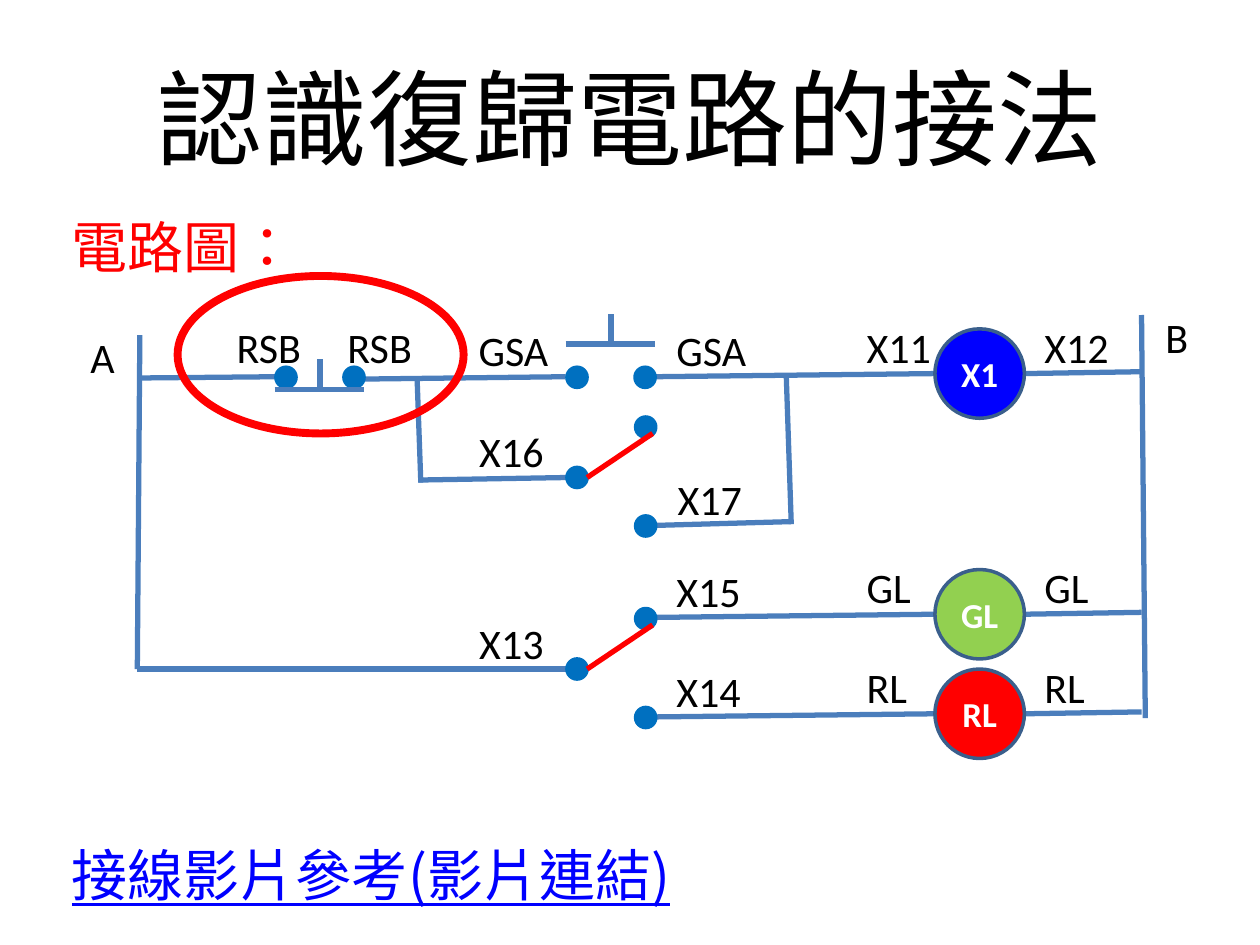
from lxml import etree
from pptx import Presentation
from pptx.dml.color import RGBColor
from pptx.enum.shapes import MSO_CONNECTOR, MSO_SHAPE
from pptx.enum.text import MSO_ANCHOR, MSO_AUTO_SIZE, PP_ALIGN
from pptx.oxml.ns import qn
from pptx.util import Inches, Pt

STRAIGHT = MSO_CONNECTOR.STRAIGHT
OVAL = MSO_SHAPE.OVAL
MIDDLE = MSO_ANCHOR.MIDDLE
NO_FIT, GROW = MSO_AUTO_SIZE.NONE, MSO_AUTO_SIZE.SHAPE_TO_FIT_TEXT
CENTER, LEFT = PP_ALIGN.CENTER, PP_ALIGN.LEFT

BLACK = RGBColor(0x00, 0x00, 0x00)
WHITE = RGBColor(0xFF, 0xFF, 0xFF)
RED = RGBColor(0xFF, 0x00, 0x00)
BLUE = RGBColor(0x00, 0x00, 0xFF)
GREEN = RGBColor(0x92, 0xD0, 0x50)
WIRE = RGBColor(0x4B, 0x7E, 0xBC)
EDGE = RGBColor(0x3A, 0x5F, 0x8C)
DOT = RGBColor(0x00, 0x70, 0xC0)

LATIN, CJK = "Calibri", "Noto Sans CJK JP"
COLS, ROWS = 100, 75
CELL = Inches(0.1)
LAMP_X, LAMP_SIZE, DOT_SIZE = 74.2, 7.1, 1.6
LABEL_WIDTHS = {1: 4, 2: 5.6, 3: 7.7}


def grid(*cells):
    """Turn grid cells into slide lengths."""
    return [int(c * CELL) for c in cells]


def add_run(p, text, size, color, font=LATIN, bold=False, underline=False):
    """Add one formatted run to a paragraph."""
    r = p.add_run()
    r.text = text
    r.font.size, r.font.name = Pt(size), font
    r.font.bold, r.font.underline = bold, underline
    r.font.color.rgb = color
    if font == CJK:
        rPr = r.font._element
        rPr.set("lang", "zh-TW")
        etree.SubElement(rPr, qn("a:ea")).set("typeface", font)


def add_wire(s, x1, y1, x2, y2, color=WIRE):
    """Draw a straight wire between two grid points."""
    line = s.shapes.add_connector(STRAIGHT, *grid(x1, y1, x2, y2))
    line.line.color.rgb = color
    line.line.width = Pt(3)
    etree.SubElement(line._element.spPr, qn("a:effectLst"))


def add_oval(s, x, y, w, h, fill, edge, width=2):
    """Draw an ellipse, hollow when it has no fill colour."""
    sp = s.shapes.add_shape(OVAL, *grid(x, y, w, h))
    sp.shadow.inherit = False
    if fill is None:
        sp.fill.background()
    else:
        sp.fill.solid()
        sp.fill.fore_color.rgb = fill
    sp.line.color.rgb = edge
    sp.line.width = Pt(width)
    return sp


def add_dot(s, x, y):
    """Draw a contact point."""
    add_oval(s, x, y, DOT_SIZE, DOT_SIZE, DOT, DOT)


def add_label(s, text, x, y):
    """Write a terminal name."""
    sp = s.shapes.add_textbox(*grid(x, y, LABEL_WIDTHS[len(text)], 5))
    tf = sp.text_frame
    tf.word_wrap = False
    tf.auto_size = GROW
    add_run(tf.paragraphs[0], text, 24, BLACK)


def add_rung(s, y, lamp, color, left, right, contact):
    """Draw a lamp or relay coil with its wires and terminal names."""
    end = LAMP_X + LAMP_SIZE
    add_wire(s, LAMP_X, y + 3.55, 52, y + 3.8)
    add_wire(s, end, y + 3.55, 90.6, y + 3.4)
    sp = add_oval(s, LAMP_X, y, LAMP_SIZE, LAMP_SIZE, color, EDGE)
    tf = sp.text_frame
    tf.margin_left = tf.margin_right = 0
    tf.vertical_anchor = MIDDLE
    tf.paragraphs[0].alignment = CENTER
    add_run(tf.paragraphs[0], lamp, 20, WHITE, bold=True)
    add_label(s, left, 67.8, y - 1.1)
    add_label(s, right, 81.9, y - 1.1)
    add_label(s, contact, 52.7, y - 0.8)


def add_button(s, x, y):
    """Draw a push button's bar and stem."""
    add_wire(s, x, y, x + 7.1, y)
    add_wire(s, x + 3.6, y, x + 3.6, y - 2.4)


def add_switch(s, name, x, y):
    """Draw a changeover contact with its common terminal name."""
    for dx, dy in ((0, 0), (5.45, -4), (5.45, 3.85)):
        add_dot(s, x + dx, y + dy)
    add_wire(s, x + 1.6, y + 0.8, x + 6.8, y - 2.7, RED)
    add_label(s, name, x - 7.95, y - 3.8)


def fill_body(sp):
    """Write the heading above the circuit and the reference below it."""
    sp.left, sp.top, sp.width, sp.height = grid(4.7, 16.4, 90, 54.6)
    tf = sp.text_frame
    tf.auto_size = NO_FIT
    rows = (("電路圖：", RED, False, 0), ("接線影片參考(影片連結)", BLUE, True, 320))
    for i, (text, color, underline, gap) in enumerate(rows):
        p = tf.add_paragraph() if i else tf.paragraphs[0]
        p.alignment = LEFT
        p.space_before = Pt(gap)
        pPr = p._p.get_or_add_pPr()
        pPr.set("marL", str(Inches(0.38)))
        pPr.set("indent", str(-Inches(0.38)))
        etree.SubElement(pPr, qn("a:buNone"))
        add_run(p, text, 32, color, CJK, underline=underline)


def fill_title(sp):
    """Write the slide title."""
    sp.left, sp.top, sp.width, sp.height = grid(5, 3, 90, 12.5)
    tf = sp.text_frame
    tf.auto_size = NO_FIT
    tf.vertical_anchor = MIDDLE
    tf.paragraphs[0].alignment = CENTER
    add_run(tf.paragraphs[0], "認識復歸電路的接法", 60, BLACK, CJK)


def main():
    """Build the circuit slide."""
    prs = Presentation()
    prs.slide_width, prs.slide_height = grid(COLS, ROWS)
    s = prs.slides.add_slide(prs.slide_layouts[1])
    fill_title(s.shapes.title)
    fill_body(s.placeholders[1])

    for wire in (
        (10.9, 53.1, 11.1, 26.6), (90.9, 57, 90.6, 25),
        (44.9, 53.1, 10.9, 53.1), (44.9, 29.9, 27.6, 30.1),
        (45, 37.9, 33.2, 38.1), (33.4, 38.3, 33.1, 29.9),
        (62.8, 41.4, 52.1, 41.7), (62.8, 41.6, 62.4, 29.7),
        (22, 29.9, 10.9, 30),
    ):
        add_wire(s, *wire)

    for rung in (
        (26.1, "X1", BLUE, "X11", "X12", "GSA"),
        (45.2, "GL", GREEN, "GL", "GL", "X15"),
        (53.1, "RL", RED, "RL", "RL", "X14"),
    ):
        add_rung(s, *rung)

    add_switch(s, "X16", 45, 37.1)
    add_switch(s, "X13", 45, 52.3)
    for x in (21.9, 27.3, 45, 50.4):
        add_dot(s, x, 29.15)
    add_button(s, 44.9, 27.3)
    add_button(s, 21.8, 30.9)

    for label in (
        ("A", 6.2, 25.8), ("B", 91.5, 24.2), ("GSA", 37, 25.3),
        ("RSB", 17.8, 25), ("RSB", 26.6, 25), ("X17", 52.8, 37.1),
    ):
        add_label(s, *label)
    add_oval(s, 14.1, 21.9, 22.7, 12.5, None, RED, 4.5)
    prs.save("out.pptx")


if __name__ == "__main__":
    main()
